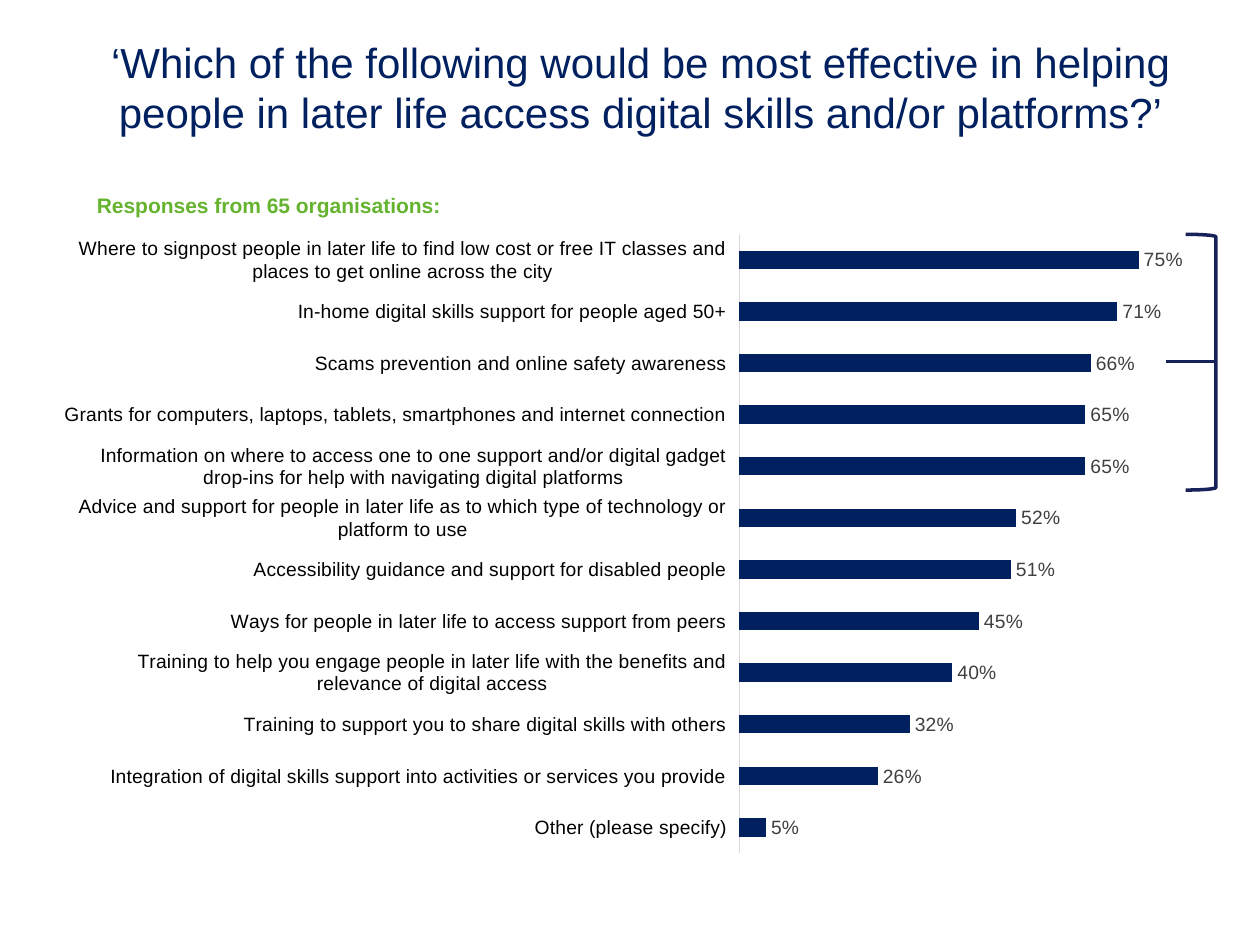
from dataclasses import dataclass

from lxml import etree
from pptx import Presentation
from pptx.chart.data import CategoryChartData
from pptx.dml.color import RGBColor
from pptx.enum.chart import XL_CHART_TYPE, XL_LABEL_POSITION, XL_TICK_LABEL_POSITION, XL_TICK_MARK
from pptx.enum.shapes import MSO_CONNECTOR, MSO_SHAPE
from pptx.enum.text import MSO_ANCHOR, MSO_AUTO_SIZE, PP_ALIGN
from pptx.oxml import parse_xml
from pptx.oxml.ns import nsdecls, qn
from pptx.util import Inches, Pt


@dataclass(frozen=True)
class Theme:
    font: str = "Arial"
    chart_font: str = "Calibri"
    navy: RGBColor = RGBColor(0x00, 0x20, 0x60)
    green: RGBColor = RGBColor(0x65, 0xB3, 0x2E)
    bracket: RGBColor = RGBColor(0x16, 0x22, 0x59)
    black: RGBColor = RGBColor(0x00, 0x00, 0x00)
    label: RGBColor = RGBColor(0x40, 0x40, 0x40)
    axis: RGBColor = RGBColor(0xD9, 0xD9, 0xD9)
    title_size: int = 24
    subtitle_size: int = 12
    label_size: int = 11
    chart_size: int = 10
    bracket_width: int = 2


def style_font(font, name, size, color, bold=False):
    font.name = name
    font.size = Pt(size)
    font.color.rgb = color
    font.bold = bold


def fill_box(box, text, size, color, align, bold=False):
    frame = box.text_frame
    frame.word_wrap = True
    frame.auto_size = MSO_AUTO_SIZE.SHAPE_TO_FIT_TEXT
    para = frame.paragraphs[0]
    para.alignment = align
    span = para.add_run()
    span.text = text
    style_font(span.font, theme.font, size, color, bold)


theme = Theme()
deck = Presentation()
deck.slide_width, deck.slide_height = Inches(10), Inches(7.5)
page = deck.slides.add_slide(deck.slide_layouts[5])

# Title
title = page.shapes.title
title.left, title.top, title.width, title.height = map(Inches, (0.26, 0.24, 9.65, 0.91))
title.text_frame.vertical_anchor = MSO_ANCHOR.TOP
fill_box(
    title,
    "‘Which of the following would be most effective in helping people in later life "
    "access digital skills and/or platforms?’",
    theme.title_size, theme.navy, PP_ALIGN.CENTER,
)

# Bar chart, answers listed from the bottom up
answers = [
    ("Other (please specify)", 0.05),
    ("Integration of digital skills support into activities or services you provide", 0.26),
    ("Training to support you to share digital skills with others", 0.32),
    ("Training to help you engage people in later life with the benefits and relevance of digital access", 0.40),
    ("Ways for people in later life to access support from peers", 0.45),
    ("Accessibility guidance and support for disabled people", 0.51),
    ("Advice and support for people in later life as to which type of technology or platform to use", 0.52),
    ("Information on where to access one to one support and/or digital gadget drop-ins "
     "for help with navigating digital platforms", 0.65),
    ("Grants for computers, laptops, tablets, smartphones and internet connection", 0.65),
    ("Scams prevention and online safety awareness", 0.66),
    ("In-home digital skills support for people aged 50+", 0.71),
    ("Where to signpost people in later life to find low cost or free IT classes "
     "and places to get online across the city", 0.75),
]
data = CategoryChartData(number_format="0%")
data.categories = [answer for answer, share in answers]
data.add_series("Series 1", [share for answer, share in answers])
chart = page.shapes.add_chart(
    XL_CHART_TYPE.BAR_CLUSTERED, *map(Inches, (0.51, 1.75, 8.9, 5.12)), data
).chart
chart.has_legend = False
chart.has_title = False
style_font(chart.font, theme.chart_font, theme.chart_size, theme.black)

categories = chart.category_axis
categories.major_tick_mark = XL_TICK_MARK.NONE
categories.has_major_gridlines = False
categories.tick_label_position = XL_TICK_LABEL_POSITION.LOW
categories.format.line.color.rgb = theme.axis
categories.format.line.width = Pt(0.75)
style_font(categories.tick_labels.font, theme.font, theme.label_size, theme.black)

values = chart.value_axis
values.visible = False
values.has_major_gridlines = False
values.minimum_scale, values.maximum_scale = 0, 0.8

plot = chart.plots[0]
plot.gap_width = 182
plot.vary_by_categories = False
bars = plot.series[0]
bars.format.fill.solid()
bars.format.fill.fore_color.rgb = theme.navy
labels = bars.data_labels
labels.show_value = True
labels.number_format = "0%"
labels.number_format_is_linked = False
labels.position = XL_LABEL_POSITION.OUTSIDE_END
style_font(labels.font, theme.font, theme.label_size, theme.label)

# Plot area as shares of the chart
area = chart.element.find(".//" + qn("c:plotArea"))
for layout in area.findall(qn("c:layout")):
    area.remove(layout)
shares = "".join(
    f'<c:{tag} val="{val}"/>'
    for tag, val in [
        ("layoutTarget", "inner"), ("xMode", "edge"), ("yMode", "edge"),
        ("x", 0.602), ("y", 0.021), ("w", 0.38), ("h", 0.96),
    ]
)
area.insert(0, parse_xml(
    f'<c:layout {nsdecls("c")}><c:manualLayout>{shares}</c:manualLayout></c:layout>'
))

# Subtitle
subtitle = page.shapes.add_textbox(*map(Inches, (0.67, 1.48, 3.03, 0.3)))
fill_box(subtitle, "Responses from 65 organisations:", theme.subtitle_size,
         theme.green, PP_ALIGN.LEFT, bold=True)

# Bracket around the top five answers
marker = page.shapes.add_group_shape()
bracket = marker.shapes.add_shape(
    MSO_SHAPE.RIGHT_BRACKET, *map(Inches, (9.41, 1.86, 0.24, 2.03)))
bracket.shadow.inherit = False
bracket.fill.background()
pointer = marker.shapes.add_connector(
    MSO_CONNECTOR.STRAIGHT, *map(Inches, (9.25, 2.87, 9.65, 2.87)))
etree.SubElement(pointer.line._get_or_add_ln().getparent(), qn("a:effectLst"))
for part in (bracket, pointer):
    part.line.color.rgb = theme.bracket
    part.line.width = Pt(theme.bracket_width)

deck.save("out.pptx")
